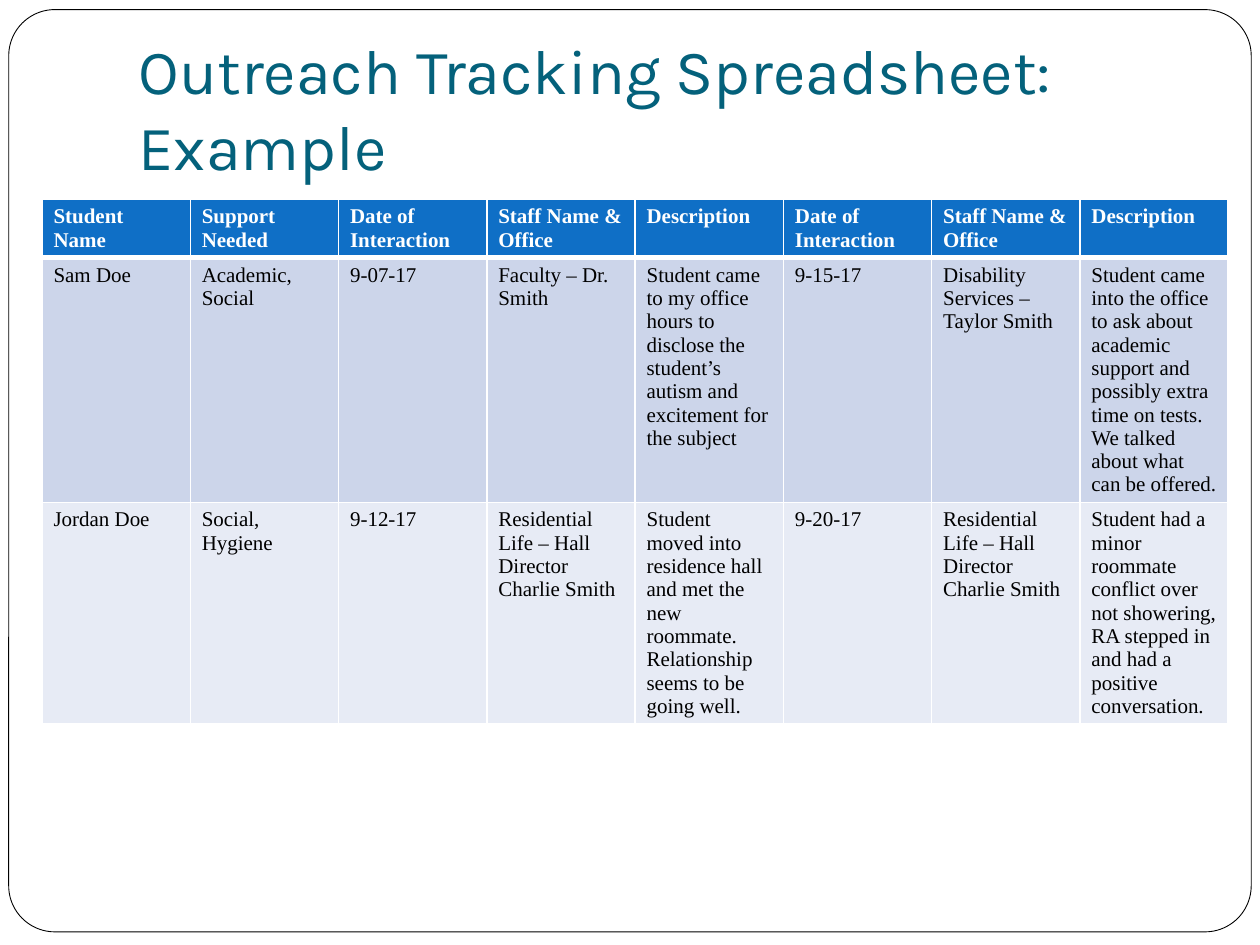
from dataclasses import dataclass

from lxml.etree import SubElement as Sub
from pptx import Presentation
from pptx.dml.color import RGBColor as Rgb
from pptx.enum.shapes import MSO_SHAPE as Kind
from pptx.enum.text import MSO_ANCHOR as Anchor, MSO_AUTO_SIZE as Fit, PP_ALIGN as Align
from pptx.oxml.ns import qn
from pptx.util import Pt


@dataclass(frozen=True)
class Theme:
    white: str = "FFFFFF"
    black: str = "000000"
    teal: str = "04617B"
    blue: str = "0F6FC6"
    bands: tuple = ("CCD5EA", "E7EBF5")
    head: str = "Karla"
    body: str = "Times New Roman"
    big: int = 36
    small: int = 12


THEME = Theme()

ROWS = [
    ["Student Name", "Support Needed"]
    + ["Date of Interaction", "Staff Name & Office", "Description"] * 2,
    ["Sam Doe", "Academic, Social", "9-07-17", "Faculty – Dr. Smith",
     "Student came to my office hours to disclose the student’s autism "
     "and excitement for the subject",
     "9-15-17", "Disability Services – Taylor Smith",
     "Student came into the office to ask about academic support and "
     "possibly extra time on tests. We talked about what can be offered."],
    ["Jordan Doe", "Social, Hygiene", "9-12-17",
     "Residential Life – Hall Director Charlie Smith",
     "Student moved into residence hall and met the new roommate. "
     "Relationship seems to be going well.",
     "9-20-17", "Residential Life – Hall Director Charlie Smith",
     "Student had a minor roommate conflict over not showering, "
     "RA stepped in and had a positive conversation."],
]


def paint(fill, color):
    fill.solid()
    fill.fore_color.rgb = Rgb.from_string(color)


def write(para, text, font, size, color, bold=False):
    run = para.add_run()
    run.text = text
    run.font.name = font
    run.font.size = Pt(size)
    run.font.bold = bold
    run.font.color.rgb = Rgb.from_string(color)


def edge(cell, side, width):
    line = Sub(cell._tc.get_or_add_tcPr(), qn(f"a:ln{side}"), w=str(Pt(width)))
    fill = Sub(line, qn("a:solidFill"))
    Sub(fill, qn("a:srgbClr"), val=THEME.white)


def add_frame(slide, box):
    frame = slide.shapes.add_shape(Kind.ROUNDED_RECTANGLE, *map(Pt, box))
    frame.adjustments[0] = 0.05
    frame.shadow.inherit = False
    paint(frame.fill, THEME.white)
    paint(frame.line.fill, THEME.black)
    frame.line.width = Pt(0.5)
    slide.shapes._spTree.insert(2, frame._element)


def add_title(slide, box, text):
    title = slide.shapes.title
    title.left, title.top, title.width, title.height = map(Pt, box)
    body = title.text_frame
    body.word_wrap = True
    body.auto_size = Fit.NONE
    body.vertical_anchor = Anchor.BOTTOM
    body.margin_left = body.margin_right = body.margin_bottom = Pt(7.2)
    body.margin_top = Pt(3.6)
    para = body.paragraphs[0]
    para.alignment = Align.LEFT
    write(para, text, THEME.head, THEME.big, THEME.teal)


def add_grid(slide, box, rows, tall):
    left, top, width, height = box
    count = len(rows[0])
    grid = slide.shapes.add_table(len(rows), count, *map(Pt, box)).table
    for col in grid.columns:
        col.width = Pt(width / count)
    for row in grid.rows:
        row.height = Pt(tall)
    for i, texts in enumerate(rows):
        first = i == 0
        back = THEME.blue if first else THEME.bands[(i - 1) % 2]
        ink = THEME.white if first else THEME.black
        rules = {"L": 1, "R": 1, "T": 3 if i == 1 else 1, "B": 3 if first else 1}
        for j, text in enumerate(texts):
            cell = grid.cell(i, j)
            for side, size in rules.items():
                edge(cell, side, size)
            paint(cell.fill, back)
            cell.margin_left = cell.margin_right = Pt(6.6)
            cell.margin_top = cell.margin_bottom = Pt(3.3)
            para = cell.text_frame.paragraphs[0]
            write(para, text, THEME.body, THEME.small, ink, first)


def main():
    deck = Presentation()
    deck.slide_width, deck.slide_height = Pt(720), Pt(540)
    slide = deck.slides.add_slide(deck.slide_layouts[5])
    paint(slide.background.fill, THEME.white)
    add_frame(slide, (5, 5.5, 710, 527))
    add_title(slide, (72, 21.6, 612, 90), "Outreach Tracking Spreadsheet: Example")
    add_grid(slide, (24, 114, 678, 324), ROWS, 29.5)
    deck.save("out.pptx")


if __name__ == "__main__":
    main()
